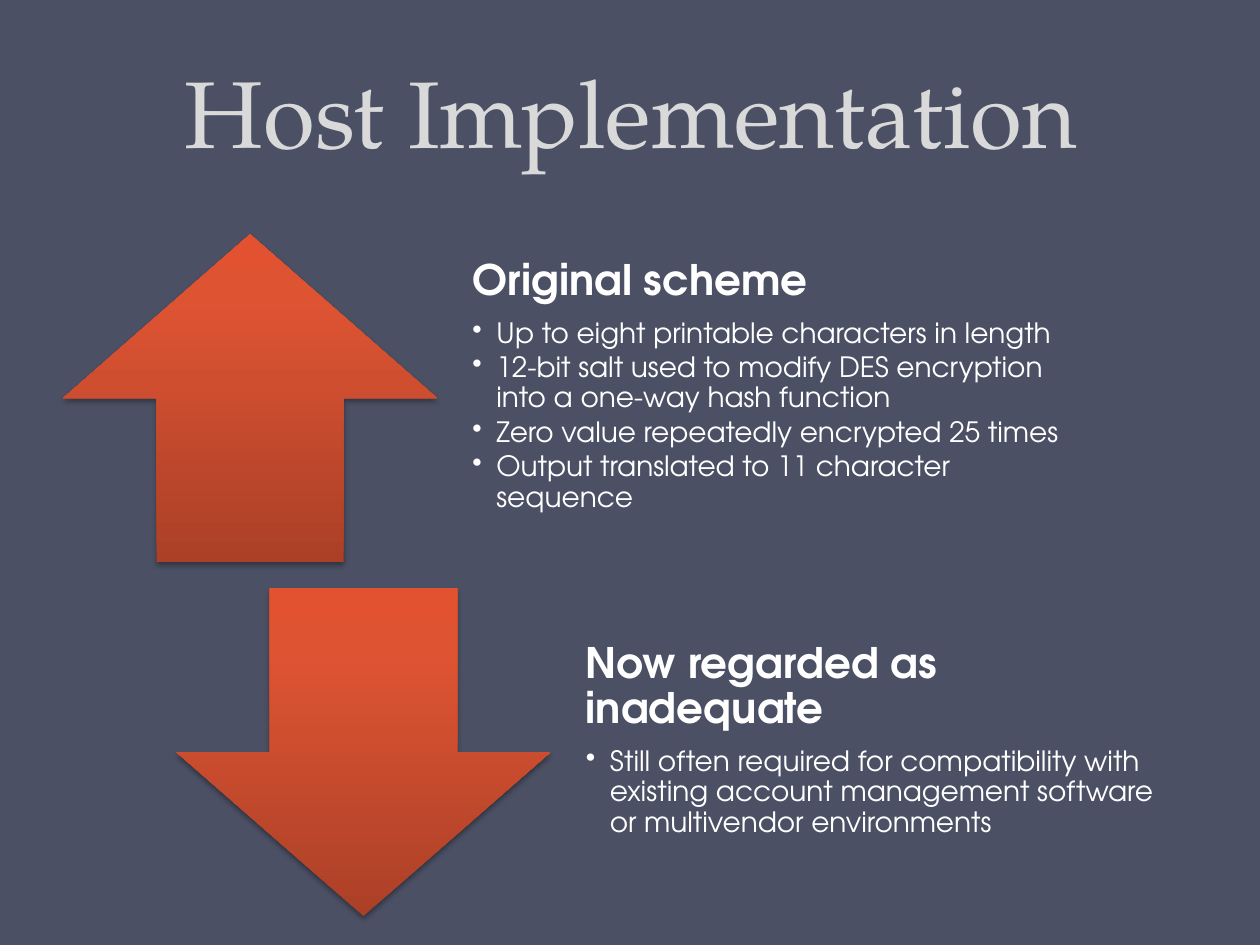
from dataclasses import dataclass

from lxml.etree import SubElement
from pptx import Presentation
from pptx.dml.color import RGBColor
from pptx.enum.shapes import MSO_SHAPE
from pptx.enum.text import MSO_ANCHOR, MSO_AUTO_SIZE, PP_ALIGN
from pptx.oxml import parse_xml
from pptx.oxml.ns import nsdecls, qn
from pptx.slide import Slide
from pptx.util import Inches, Length, Pt

HEAD_FONT = "TeX Gyre Pagella"
BODY_FONT = "TeX Gyre Adventor"
BACK, PALE, WHITE = "4B5064", "D9D9D9", "FFFFFF"
STOPS = ((0, "AB4027"), (80, "DE5433"), (100, "E35230"))

# Grid of 100 columns by 75 rows
LEFT, TOP = 5, 18.6
ROW_H, ROW_STEP, SHIFT = 26, 28.1, 9
ARROW_W, TEXT_W, TEXT_GAP = 29.7, 50.4, 30.6


@dataclass
class Point:
    arrow: MSO_SHAPE
    head: str
    items: tuple[str, ...]


POINTS = (
    Point(MSO_SHAPE.UP_ARROW, "Original scheme", (
        "Up to eight printable characters in length",
        "12-bit salt used to modify DES encryption into a one-way hash function",
        "Zero value repeatedly encrypted 25 times",
        "Output translated to 11 character sequence",
    )),
    Point(MSO_SHAPE.DOWN_ARROW, "Now regarded as inadequate", (
        "Still often required for compatibility with existing account "
        "management software or multivendor environments",
    )),
)


def grid(*cells: float) -> list[Length]:
    return [Inches(cell / 10) for cell in cells]


def color(text: str) -> RGBColor:
    return RGBColor.from_string(text)


def style(para, font: str, size: float, shade: str, bold: bool = False) -> None:
    for run in para.runs:
        run.font.name, run.font.size, run.font.bold = font, Pt(size), bold
        run.font.color.rgb = color(shade)


def add_title(slide: Slide, text: str) -> None:
    title = slide.shapes.title
    title.left, title.top, title.width, title.height = grid(5.1, -1.9, 90, 15.7)
    frame = title.text_frame
    frame.text = text
    frame.auto_size = MSO_AUTO_SIZE.NONE
    frame.vertical_anchor = MSO_ANCHOR.BOTTOM
    para = frame.paragraphs[0]
    para.alignment, para.line_spacing = PP_ALIGN.CENTER, Pt(58)
    style(para, HEAD_FONT, 54, PALE)


def add_arrow(slide: Slide, kind: MSO_SHAPE, left: float, top: float) -> None:
    """Draw an arrow that darkens downwards and casts a soft shadow."""
    arrow = slide.shapes.add_shape(kind, *grid(left, top, ARROW_W, ROW_H))
    arrow.line.fill.background()
    arrow.shadow.inherit = False
    props = arrow.element.spPr
    stops = "".join(
        f'<a:gs pos="{pos * 1000}"><a:srgbClr val="{shade}"/></a:gs>'
        for pos, shade in STOPS
    )
    fill = parse_xml(
        f'<a:gradFill {nsdecls("a")} rotWithShape="1"><a:gsLst>{stops}</a:gsLst>'
        '<a:lin ang="16200000" scaled="0"/></a:gradFill>'
    )
    props.find(qn("a:ln")).addprevious(fill)
    props.find(qn("a:effectLst")).append(parse_xml(
        f'<a:outerShdw {nsdecls("a")} blurRad="{Pt(3.1)}" dist="{Pt(1.8)}" '
        'dir="5400000" rotWithShape="0"><a:srgbClr val="000000">'
        '<a:alpha val="35000"/></a:srgbClr></a:outerShdw>'
    ))


def add_bullet(para) -> None:
    props = para._p.get_or_add_pPr()
    indent = Inches(0.19)
    props.set("marL", str(indent))
    props.set("indent", str(-indent))
    SubElement(props, qn("a:buChar")).set("char", "•")
    para.level = 1


def add_text(slide: Slide, point: Point, left: float, top: float) -> None:
    box = slide.shapes.add_textbox(*grid(left, top, TEXT_W, ROW_H))
    frame = box.text_frame
    frame.word_wrap = True
    frame.vertical_anchor = MSO_ANCHOR.MIDDLE
    frame.margin_left = frame.margin_right = frame.margin_bottom = Inches(0.19)
    frame.margin_top = 0
    frame.text = "\n".join((point.head, *point.items))
    head, *items = frame.paragraphs
    style(head, BODY_FONT, 24, WHITE, bold=True)
    head.line_spacing, head.space_after = 0.9, Pt(8.4)
    for item in items:
        add_bullet(item)
        item.line_spacing, item.space_after = 0.9, Pt(2.4)
        style(item, BODY_FONT, 16, WHITE)


def main() -> None:
    deck = Presentation()
    deck.slide_width, deck.slide_height = grid(100, 75)
    slide = deck.slides.add_slide(deck.slide_layouts[5])
    back = slide.background.fill
    back.solid()
    back.fore_color.rgb = color(BACK)
    add_title(slide, "Host Implementation")
    for row, point in enumerate(POINTS):
        left, top = LEFT + row * SHIFT, TOP + row * ROW_STEP
        add_arrow(slide, point.arrow, left, top)
        add_text(slide, point, left + TEXT_GAP, top)
    deck.save("out.pptx")


if __name__ == "__main__":
    main()
